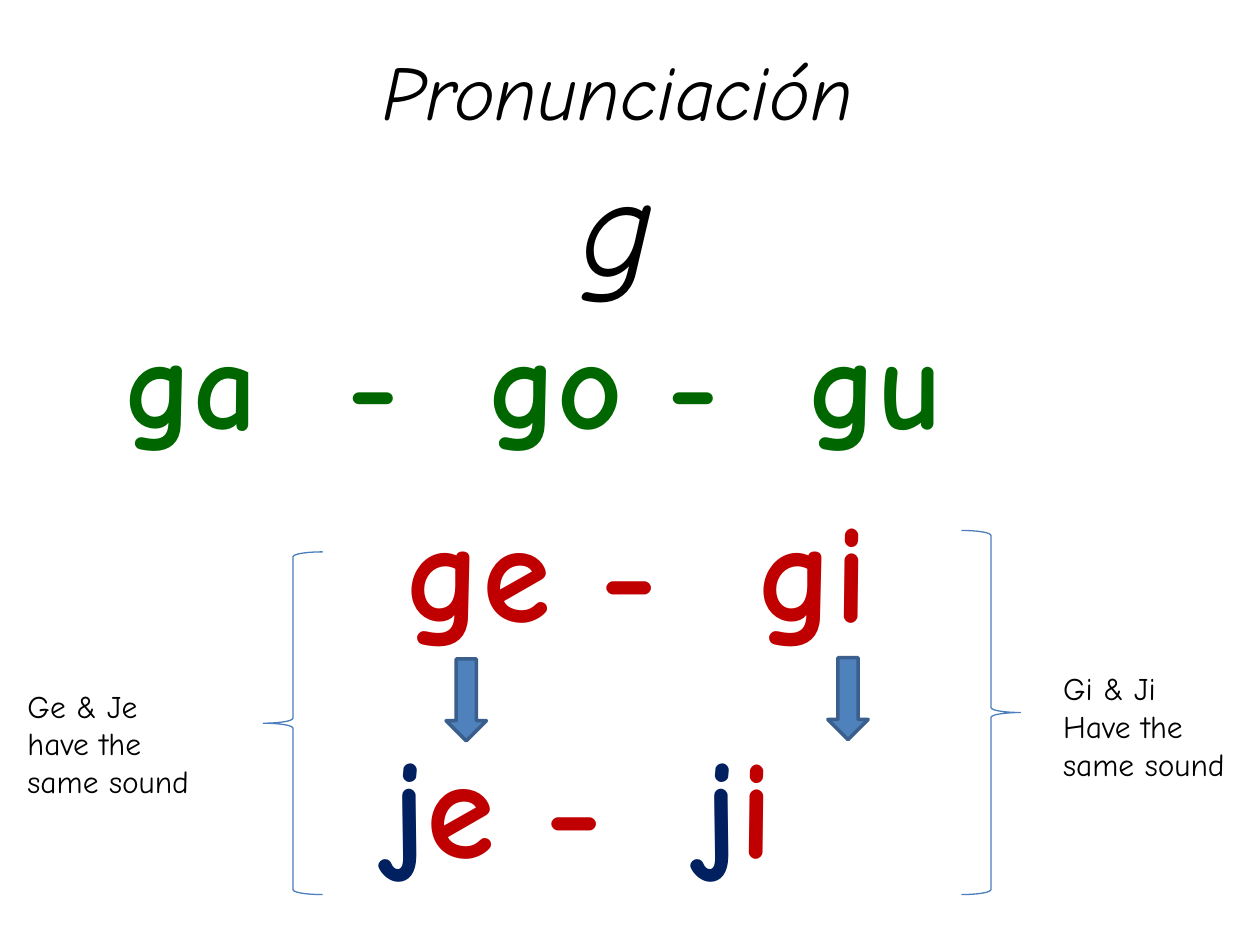
from pptx import Presentation
from pptx.dml.color import RGBColor
from pptx.enum.shapes import MSO_SHAPE as SHAPE
from pptx.enum.text import MSO_ANCHOR as ANCHOR, MSO_AUTO_SIZE as AUTO_SIZE, PP_ALIGN as ALIGN
from pptx.util import Inches, Pt

FONT = "Comic Neue"
COLORS = {
    "black": "000000",
    "green": "006600",
    "red": "C00000",
    "navy": "002060",
    "arrow": "4F81BD",
    "arrow_line": "3A5F8C",
    "brace": "4B7EBC",
}


def rgb(name):
    return RGBColor.from_string(COLORS[name])


def add_run(p, text, size, color="black", bold=False, italic=False):
    r = p.add_run()
    r.text = text
    font = r.font
    font.name, font.size = FONT, Pt(size)
    font.bold, font.italic = bold, italic
    font.color.rgb = rgb(color)


def set_title(s, heading, letter):
    title = s.shapes.title
    title.left, title.top = Inches(0.12), Inches(0.08)
    title.width, title.height = Inches(9.57), Inches(2.6)
    tf = title.text_frame
    tf.vertical_anchor = ANCHOR.MIDDLE
    p = tf.paragraphs[0]
    p.alignment = ALIGN.CENTER
    add_run(p, heading, 44, italic=True)
    p.add_line_break()
    add_run(p, letter, 80, italic=True)


def add_text_frame(s, box, wrap=True):
    tf = s.shapes.add_textbox(*map(Inches, box)).text_frame
    tf.word_wrap = wrap
    tf.auto_size = AUTO_SIZE.SHAPE_TO_FIT_TEXT
    return tf


def add_syllables(s, box, size, parts, wrap=True):
    """Add one bold line made of (text, colour) parts."""
    p = add_text_frame(s, box, wrap).paragraphs[0]
    for text, color in parts:
        add_run(p, text, size, color, bold=True)


def add_note(s, box, lines):
    tf = add_text_frame(s, box)
    for i, line in enumerate(lines):
        p = tf.add_paragraph() if i else tf.paragraphs[0]
        add_run(p, line, 18)


def add_outlined(s, kind, box, line, width, fill=None):
    sp = s.shapes.add_shape(kind, *map(Inches, box))
    sp.shadow.inherit = False
    if fill:
        sp.fill.solid()
        sp.fill.fore_color.rgb = rgb(fill)
    else:
        sp.fill.background()
    sp.line.color.rgb = rgb(line)
    sp.line.width = Pt(width)


def main():
    prs = Presentation()
    prs.slide_width, prs.slide_height = Inches(10), Inches(7.5)
    s = prs.slides.add_slide(prs.slide_layouts[5])

    set_title(s, "Pronunciación", "g")
    add_syllables(s, (0.89, 2.36, 8.82, 1.31), 72, [("ga  -  go -  gu", "green")])
    add_syllables(s, (3.12, 3.78, 5.43, 1.45), 80, [("ge -  gi", "red")])
    add_syllables(s, (3, 5.65, 4.2, 1.45), 80,
                  [("j", "navy"), ("e -  ", "red"), ("j", "navy"), ("i", "red")],
                  wrap=False)

    for left, top in ((3.54, 5.23), (6.57, 5.22)):
        add_outlined(s, SHAPE.DOWN_ARROW, (left, top, 0.32, 0.65), "arrow_line", 2, "arrow")

    add_outlined(s, SHAPE.LEFT_BRACE, (2.09, 4.38, 0.47, 2.72), "brace", 0.75)
    add_note(s, (0.12, 5.4, 1.66, 1.01), ["Ge & Je", "have the same sound"])
    add_outlined(s, SHAPE.RIGHT_BRACE, (7.63, 4.21, 0.47, 2.89), "brace", 0.75)
    add_note(s, (8.34, 5.26, 1.54, 1.01), ["Gi & Ji", "Have the same sound"])

    prs.save("out.pptx")


if __name__ == "__main__":
    main()
